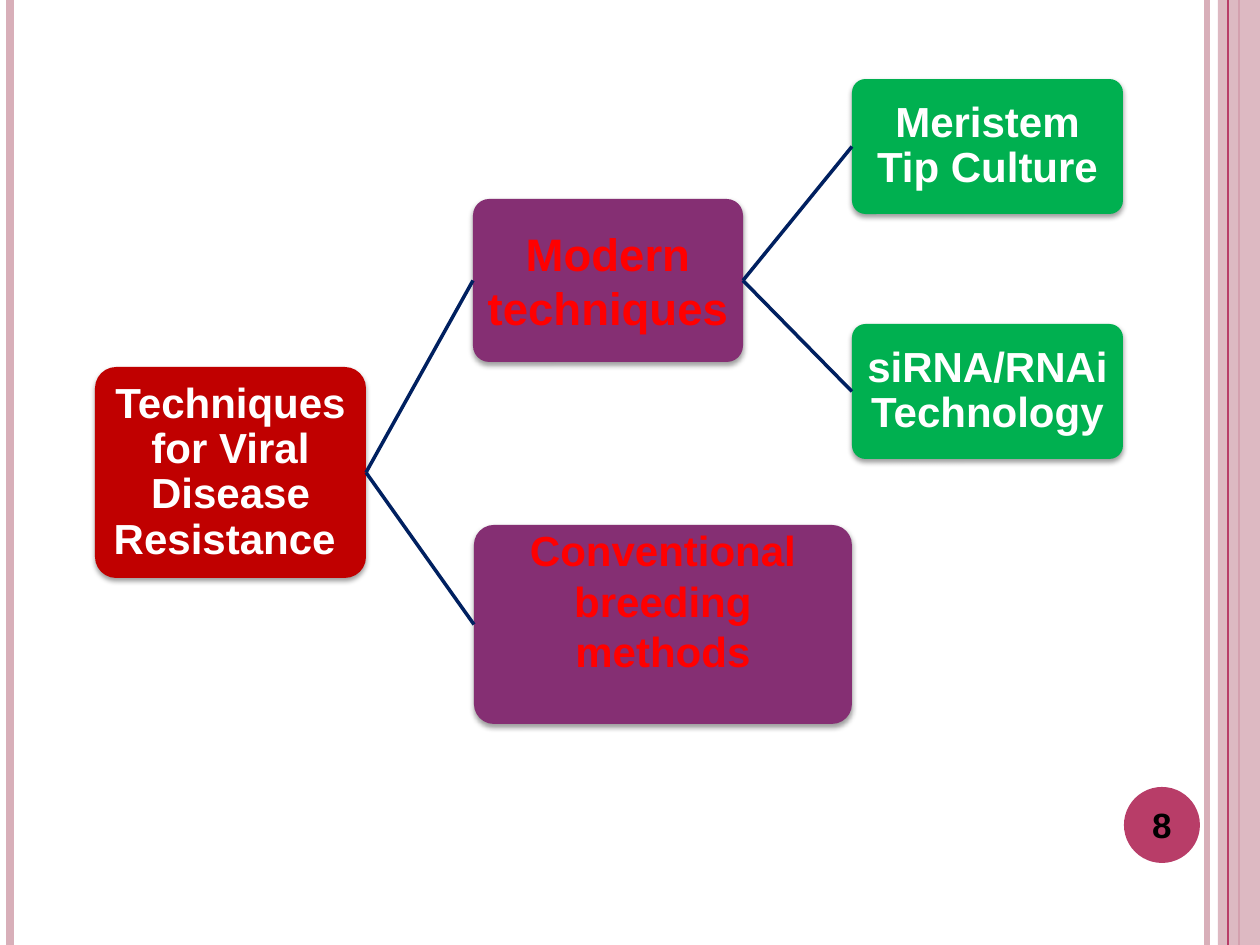
from dataclasses import dataclass
from lxml import etree
from pptx import Presentation
from pptx import util as u
from pptx.dml.color import RGBColor
from pptx.enum import shapes, text
from pptx.oxml.ns import qn


@dataclass(frozen=True)
class Theme:
    font: str = "Arial"
    rose: str = "D8AFB9"
    crimson: str = "B83D68"
    red: str = "C00000"
    purple: str = "852F73"
    green: str = "00B050"
    navy: str = "002060"
    white: str = "FFFFFF"
    bright: str = "FF0000"
    black: str = "000000"
    body: int = 24
    large: int = 26
    number: int = 20


theme = Theme()
SCALE = 914400 / 126


def add_box(kind, place, fill, words="", size=theme.body, ink=theme.white, spacing=1.0, inset=0):
    box = page.shapes.add_shape(kind, *(round(n * SCALE) for n in place))
    box.shadow.inherit = False
    box.fill.solid()
    box.fill.fore_color.rgb = RGBColor.from_string(fill)
    box.line.fill.background()
    if words:
        frame = box.text_frame
        frame.word_wrap = True
        frame.vertical_anchor = text.MSO_ANCHOR.MIDDLE
        frame.margin_left = frame.margin_right = round(inset * SCALE)
        frame.margin_top = frame.margin_bottom = 0
        para = frame.paragraphs[0]
        para.text = words
        para.alignment = text.PP_ALIGN.CENTER
        para.line_spacing = spacing
        para.font.name = theme.font
        para.font.size = u.Pt(size)
        para.font.bold = True
        para.font.color.rgb = RGBColor.from_string(ink)
    return box


def add_line(start, end, color, width):
    line = page.shapes.add_connector(
        shapes.MSO_CONNECTOR.STRAIGHT, *(round(n * SCALE) for n in (*start, *end)))
    line.line.color.rgb = RGBColor.from_string(color)
    line.line.width = u.Pt(width)
    etree.SubElement(line._element.spPr, qn("a:effectLst"))
    return line


deck = Presentation()
deck.slide_width = round(1260 * SCALE)
deck.slide_height = round(945 * SCALE)
page = deck.slides.add_slide(deck.slide_layouts[6])

for x, color, width in ((1207, theme.rose, 3), (10, theme.rose, 4.5), (1239, theme.crimson, 1.5)):
    add_line((x, 0), (x, 945), color, width)
band = add_box(shapes.MSO_SHAPE.RECTANGLE, (1218, 0, 42, 945), theme.rose)
band_color = band._element.spPr.find(qn("a:solidFill"))[0]
etree.SubElement(band_color, qn("a:alpha"), val="87000")
add_line((1228, 0), (1228, 945), theme.crimson, 0.75)
add_box(shapes.MSO_SHAPE.OVAL, (1124, 787, 76, 76), theme.crimson, "8", theme.number, theme.black)

nodes = {
    "root": ((95, 367, 271, 211), theme.red, "Techniques for Viral Disease Resistance ",
             theme.body, theme.white, 0.9),
    "modern": ((473, 199, 270, 163), theme.purple, "Modern techniques",
               theme.large, theme.bright, 1.0),
    "meristem": ((852, 79, 271, 135), theme.green, "Meristem Tip Culture",
                 theme.body, theme.white, 0.9),
    "rna": ((852, 324, 271, 135), theme.green, "siRNA/RNAi Technology",
            theme.body, theme.white, 0.9),
    "conventional": ((474, 525, 378, 199), theme.purple, "Conventional breeding methods",
                     theme.body, theme.bright, 1.0),
}
boxes = {}
for name, details in nodes.items():
    box = add_box(shapes.MSO_SHAPE.ROUNDED_RECTANGLE, *details, inset=7)
    box.adjustments[0] = 0.1
    effects = box._element.spPr.find(qn("a:effectLst"))
    shadow = etree.SubElement(effects, qn("a:outerShdw"), blurRad=str(u.Pt(3.1)),
                              dist=str(u.Pt(1.6)), dir="5400000", rotWithShape="0")
    shade = etree.SubElement(shadow, qn("a:srgbClr"), val=theme.black)
    etree.SubElement(shade, qn("a:alpha"), val="38000")
    boxes[name] = box
boxes["conventional"].text_frame.margin_bottom = round(48 * SCALE)

for parent, child in (("root", "modern"), ("root", "conventional"),
                      ("modern", "meristem"), ("modern", "rna")):
    branch = add_line((0, 0), (0, 0), theme.navy, 2)
    branch.begin_connect(boxes[parent], 3)
    branch.end_connect(boxes[child], 1)

deck.save("out.pptx")
